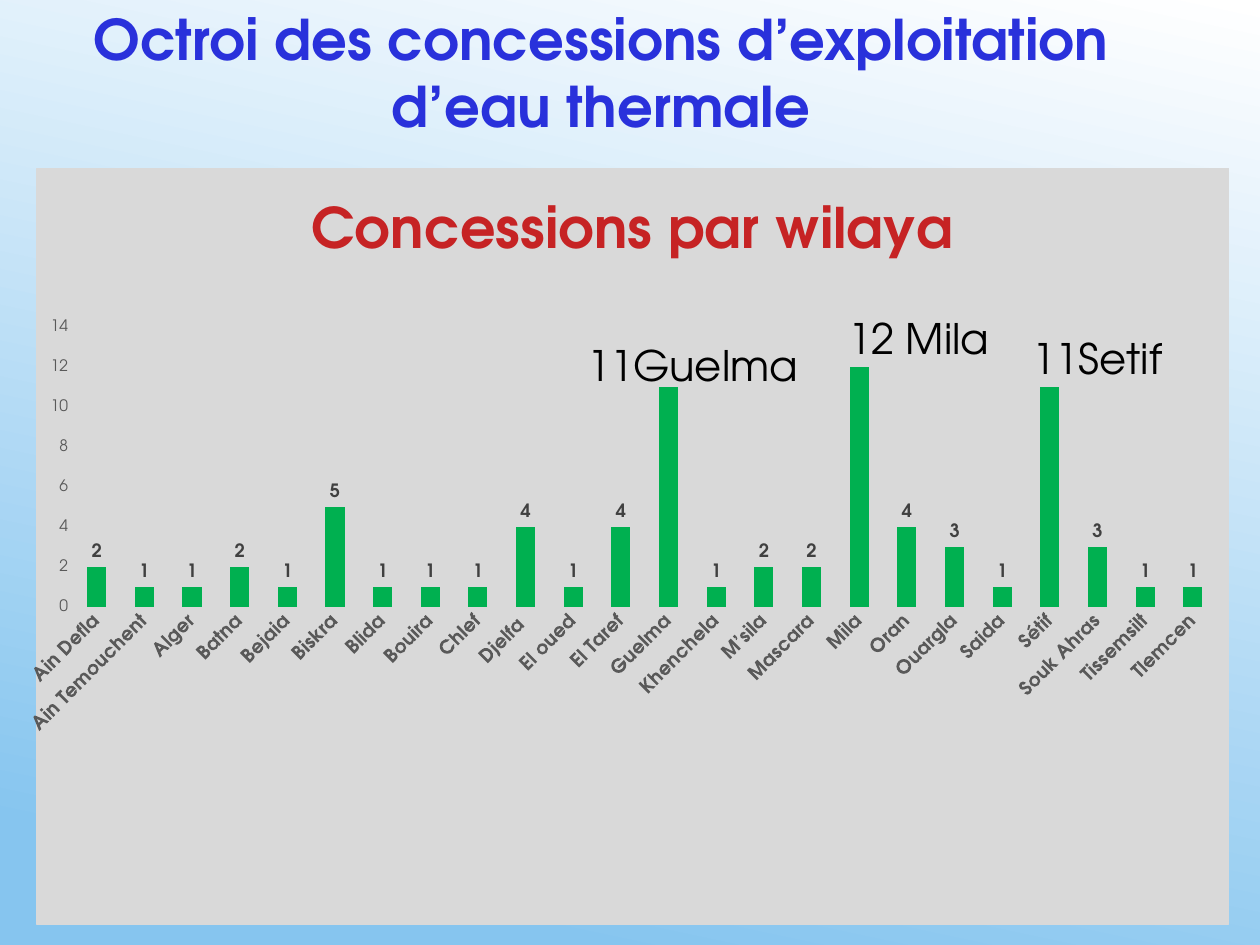
from lxml import etree
from pptx import Presentation
from pptx import util as u
from pptx.chart.data import CategoryChartData
from pptx.dml.color import RGBColor
from pptx.enum import chart as ch
from pptx.enum import text
from pptx.oxml import ns

COLORS = {"title": "2931DB", "heading": "C62324", "bar": "00B050", "panel": "D9D9D9",
          "axis": "595959", "value": "404040", "callout": "000000",
          "sky_top": "FFFFFF", "sky_bottom": "86C5EF"}

CONCESSIONS = {
    "Ain Defla": 2, "Ain Temouchent": 1, "Alger": 1, "Batna": 2, "Bejaia": 1, "Biskra": 5,
    "Blida": 1, "Bouira": 1, "Chlef": 1, "Djelfa ": 4, "El oued": 1, "El Taref": 4,
    "Guelma": 11, "Khenchela": 1, "M’sila": 2, "Mascara": 2, "Mila": 12, "Oran": 4,
    "Ouargla": 3, "Saida": 1, "Sétif": 11, "Souk Ahras": 3, "Tissemsilt": 1, "Tlemcen": 1}

CALLOUTS = {"Guelma": ("11Guelma", 0.02, 0.01), "Mila": ("12 Mila", 0.05, 0),
            "Sétif": ("11Setif", 0.04, 0)}


class SlideBuilder:
    """Holds the text styles and the current slide, and adds each kind of element."""

    FONT = "TeX Gyre Adventor"
    STYLES = {"title": (32, True), "heading": (32, True), "axis": (9, False),
              "category": (11, True), "value": (10.5, True), "callout": (24, False)}

    def __init__(self, prs):
        self.s = prs.slides.add_slide(prs.slide_layouts[5])

    def color(self, name):
        return RGBColor.from_string(COLORS[name])

    def style(self, font, style, color):
        size, bold = self.STYLES[style]
        for name, value in {"name": self.FONT, "size": u.Pt(size), "bold": bold}.items():
            setattr(font, name, value)
        font.color.rgb = self.color(color)

    def background(self, angle, stops):
        fill = self.s.background.fill
        fill.gradient()
        fill.gradient_angle = 360 - angle
        for stop, (position, color) in zip(fill.gradient_stops, stops):
            stop.position = position
            stop.color.rgb = self.color(color)

    def title(self, content, box):
        sp = self.s.shapes.title
        for name, value in zip(("left", "top", "width", "height"), box):
            setattr(sp, name, u.Pt(value))
        tf = sp.text_frame
        tf.text = content
        for name, value in {"word_wrap": True, "auto_size": text.MSO_AUTO_SIZE.NONE,
                            "vertical_anchor": text.MSO_ANCHOR.BOTTOM}.items():
            setattr(tf, name, value)
        p = tf.paragraphs[0]
        p.alignment = text.PP_ALIGN.CENTER
        self.style(p.runs[0].font, "title", "title")

    def layout(self, parent, index, **values):
        old = parent.find(ns.qn("c:layout"))
        if old is not None:
            parent.remove(old)
        layout = etree.Element(ns.qn("c:layout"))
        manual = etree.SubElement(layout, ns.qn("c:manualLayout"))
        for name, value in values.items():
            etree.SubElement(manual, ns.qn(f"c:{name}")).set("val", str(value))
        parent.insert(index, layout)

    def panel(self, chart):
        space = chart.element
        props = etree.Element(ns.qn("c:spPr"))
        line = etree.Element(ns.qn("a:ln"), w=str(u.Pt(0.75)))
        for parent in (props, line):
            fill = etree.SubElement(parent, ns.qn("a:solidFill"))
            etree.SubElement(fill, ns.qn("a:srgbClr")).set("val", COLORS["panel"])
        props.append(line)
        space.find(ns.qn("c:chart")).addnext(props)

    def axis(self, axis, style):
        for name in ("major_tick_mark", "minor_tick_mark"):
            setattr(axis, name, ch.XL_TICK_MARK.NONE)
        axis.format.line.fill.background()
        self.style(axis.tick_labels.font, style, "axis")

    def callout(self, point, content, x, y):
        label = point.data_label
        label.text_frame.text = content
        self.style(label.text_frame.paragraphs[0].runs[0].font, "callout", "callout")
        label.position = ch.XL_LABEL_POSITION.OUTSIDE_END
        return {"x": x, "y": y}

    def column_chart(self, heading, values, callouts, box):
        data = CategoryChartData()
        data.categories = list(values)
        data.add_series(heading, list(values.values()))
        chart = self.s.shapes.add_chart(ch.XL_CHART_TYPE.COLUMN_CLUSTERED,
                                        *map(u.Pt, box), data).chart
        self.style(chart.font, "axis", "callout")
        self.panel(chart)
        chart.has_legend = False
        tf = chart.chart_title.text_frame
        tf.text = heading
        self.style(tf.paragraphs[0].runs[0].font, "heading", "heading")
        chart.chart_title.include_in_layout = False

        self.axis(chart.category_axis, "category")
        self.axis(chart.value_axis, "axis")
        body = chart.category_axis.tick_labels.font._element.getparent().getparent().getparent()
        body.find(ns.qn("a:bodyPr")).set("rot", str(-45 * 60000))
        for name, value in {"minimum_scale": 0, "maximum_scale": 14, "major_unit": 2}.items():
            setattr(chart.value_axis, name, value)
        grid = chart.value_axis.major_gridlines.format.line
        grid.color.rgb = self.color("panel")
        grid.width = u.Pt(0.75)

        plot = chart.plots[0]
        plot.gap_width = 150
        plot.vary_by_categories = False
        series = plot.series[0]
        series.format.fill.solid()
        series.format.fill.fore_color.rgb = self.color("bar")
        labels = series.data_labels
        labels.show_value = True
        labels.position = ch.XL_LABEL_POSITION.OUTSIDE_END
        self.style(labels.font, "value", "value")
        names = list(values)
        for name, callout in callouts.items():
            index = names.index(name)
            offset = self.callout(series.points[index], *callout)
            label = chart.element.xpath(f'.//c:dLbl[c:idx/@val="{index}"]')[0]
            self.layout(label, 1, **offset)
        self.layout(chart.element.xpath(".//c:plotArea")[0], 0, layoutTarget="inner",
                    xMode="edge", yMode="edge", x=0.03, y=0.21, w=0.96, h=0.37)


def main():
    prs = Presentation()
    prs.slide_width, prs.slide_height = u.Pt(720), u.Pt(540)
    slide = SlideBuilder(prs)
    slide.background(102, [(0, "sky_top"), (0.9, "sky_bottom")])
    slide.title("Octroi des concessions d’exploitation d’eau thermale", (20, 0, 647, 83))
    slide.column_chart("Concessions par wilaya", CONCESSIONS, CALLOUTS,
                       (16.5, 95.75, 686, 432.75))
    prs.save("out.pptx")


if __name__ == "__main__":
    main()
